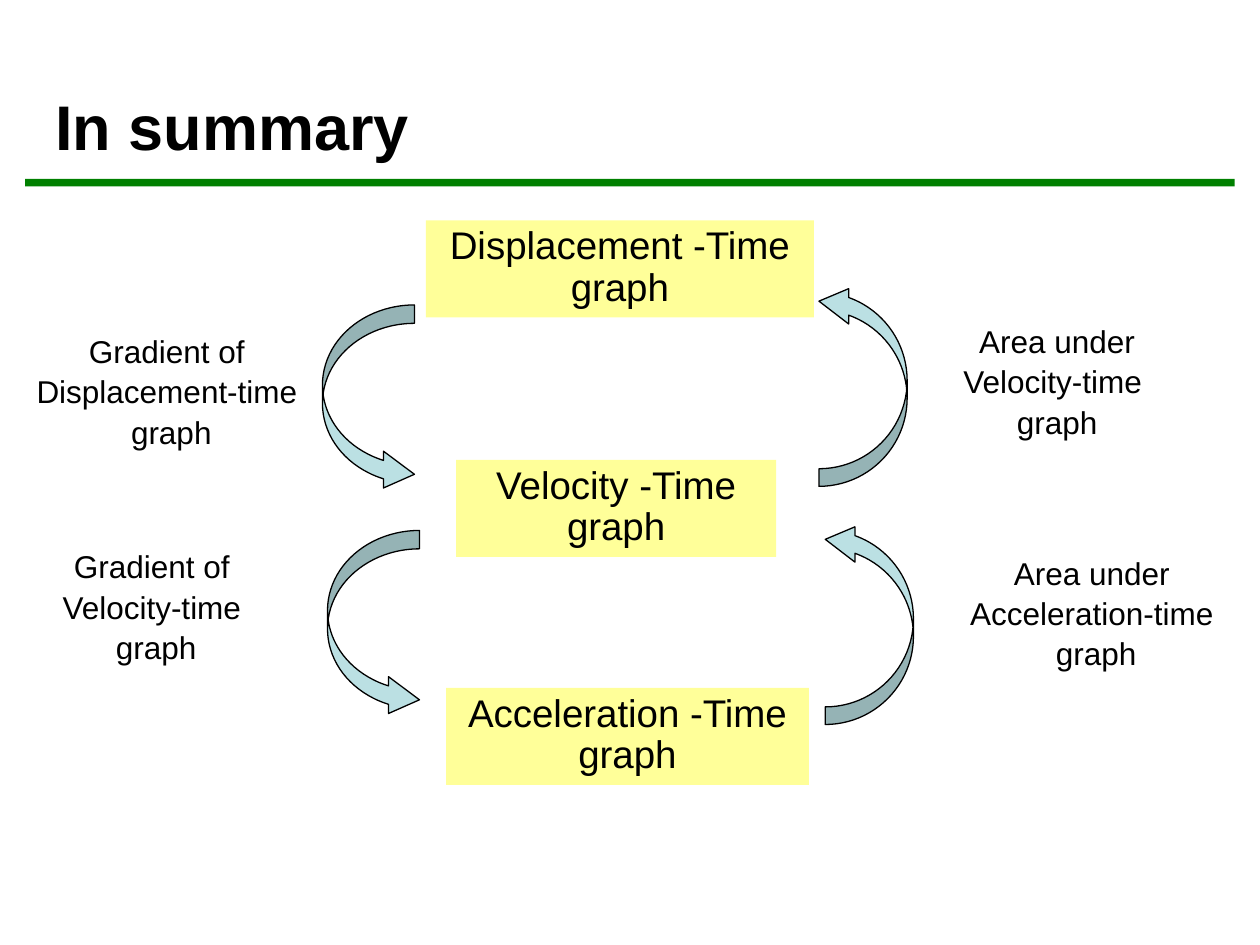
import pptx
import pptx.util
import pptx.dml.color
import pptx.enum.shapes
import pptx.enum.text

W, H = 10, 7.5
FONT, BLACK, GREEN, YELLOW, TEAL = "Arial", "000000", "008000", "FFFF99", "BBE0E3"
SHAPE = pptx.enum.shapes.MSO_SHAPE
ALIGN = pptx.enum.text.PP_ALIGN
ANCHOR = pptx.enum.text.MSO_ANCHOR

TITLE = "In summary"
GRAPHS = [
    ("Displacement -Time graph", 3.38, 1.75, 3.08),
    ("Velocity -Time graph", 3.62, 3.65, 2.54),
    ("Acceleration -Time graph", 3.54, 5.46, 2.88),
]
GRAPH_H = 0.77
LABELS = [
    (["Gradient of ", "Displacement-time ", "graph"], 0.18, 2.62, 2.36),
    (["Gradient of ", "Velocity-time ", "graph"], 0.39, 4.33, 1.7),
    (["Area under", "Velocity-time ", "graph"], 7.54, 2.54, 1.7),
    (["Area under ", "Acceleration-time ", "graph"], 7.59, 4.38, 2.22),
]
LABEL_H = 1.04
DOWN, UP = (0.73, 1.49, 0), (0.7, 1.61, 180)
ARROWS = [
    (2.56, 2.42, DOWN),
    (2.6, 4.21, DOWN),
    (6.55, 4.14, UP),
    (6.5, 2.25, UP),
]
ARROW_ADJ = (0.2, 0.4, 0.337)


def color(value):
    return pptx.dml.color.RGBColor.from_string(value)


def inches(*values):
    return [pptx.util.Inches(v) for v in values]


def add_block(s, kind, box, fill, line=None):
    sp = s.shapes.add_shape(kind, *inches(*box))
    sp.shadow.inherit = False
    sp.fill.solid()
    sp.fill.fore_color.rgb = color(fill)
    if line:
        sp.line.color.rgb = color(line)
        sp.line.width = pptx.util.Pt(0.75)
    else:
        sp.line.fill.background()
    return sp


def write(sp, lines, size, align=ALIGN.CENTER, anchor=ANCHOR.TOP,
          wrap=True, bold=False, spacing=0.9):
    tf = sp.text_frame
    tf.word_wrap = wrap
    tf.vertical_anchor = anchor
    for i, text in enumerate(lines):
        p = tf.paragraphs[0] if i == 0 else tf.add_paragraph()
        p.alignment = align
        p.line_spacing = spacing
        if i:
            p.space_before = pptx.util.Pt(0.2 * size)
        r = p.add_run()
        r.text = text
        r.font.name = FONT
        r.font.size = pptx.util.Pt(size)
        r.font.bold = bold
        r.font.color.rgb = color(BLACK)


def main():
    prs = pptx.Presentation()
    prs.slide_width, prs.slide_height = inches(W, H)
    s = prs.slides.add_slide(prs.slide_layouts[6])

    add_block(s, SHAPE.RECTANGLE, (0.2, 1.42, W - 0.4, 0.06), GREEN)
    title = s.shapes.add_textbox(*inches(0.34, 0.17, 9.37, 1.17))
    write(title, [TITLE], 36, ALIGN.LEFT, ANCHOR.BOTTOM, bold=True, spacing=1.0)

    for text, x, y, w in GRAPHS:
        write(add_block(s, SHAPE.RECTANGLE, (x, y, w, GRAPH_H), YELLOW), [text], 22)

    for x, y, (w, h, turn) in ARROWS:
        sp = add_block(s, SHAPE.CURVED_LEFT_ARROW, (x, y, w, h), TEAL, BLACK)
        sp.rotation = turn
        sp.element.spPr.xfrm.set("flipH", "1")
        for i, value in enumerate(ARROW_ADJ):
            sp.adjustments[i] = value

    for lines, x, y, w in LABELS:
        label = s.shapes.add_textbox(*inches(x, y, w, LABEL_H))
        write(label, lines, 18, wrap=False)

    prs.save("out.pptx")


if __name__ == "__main__":
    main()
